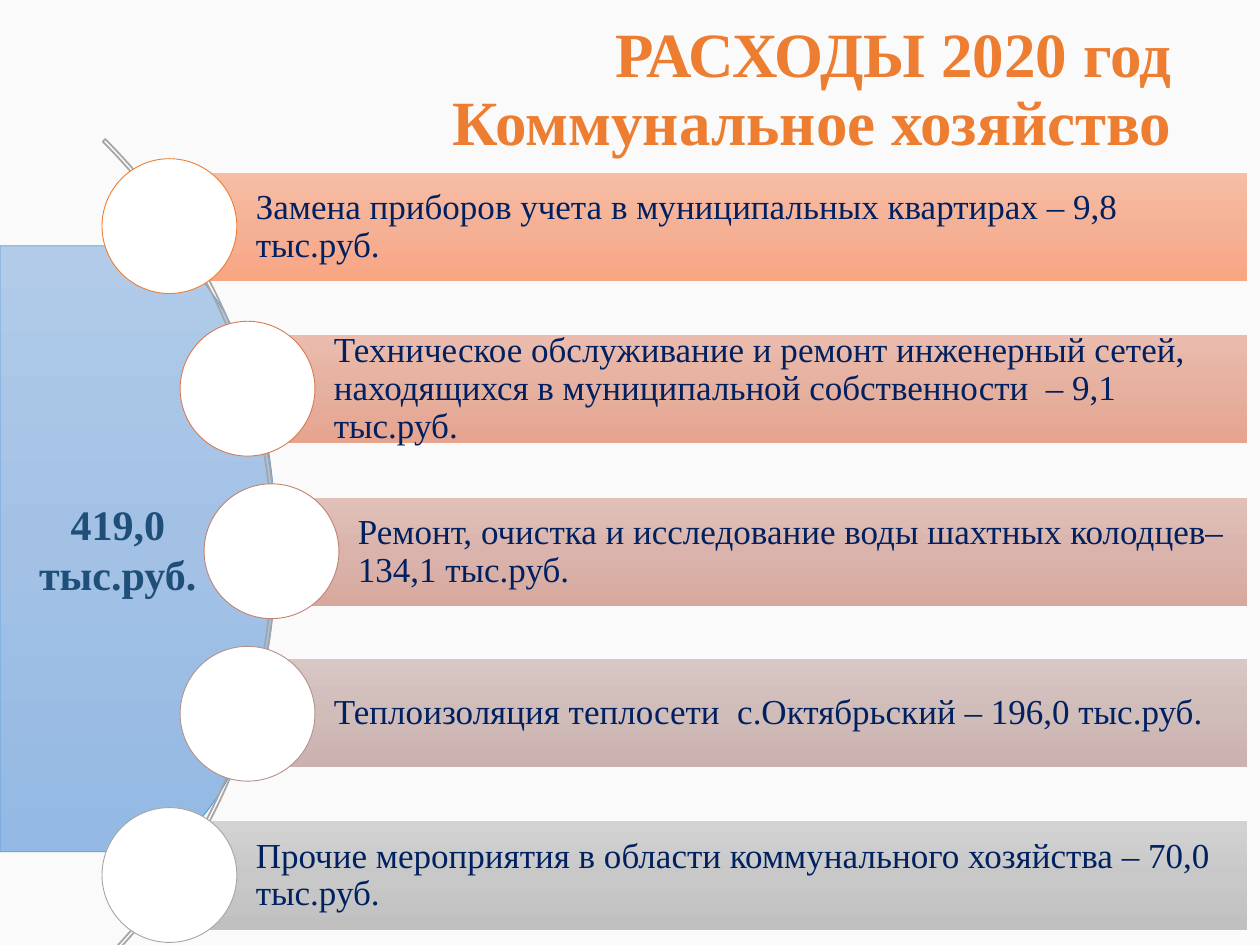
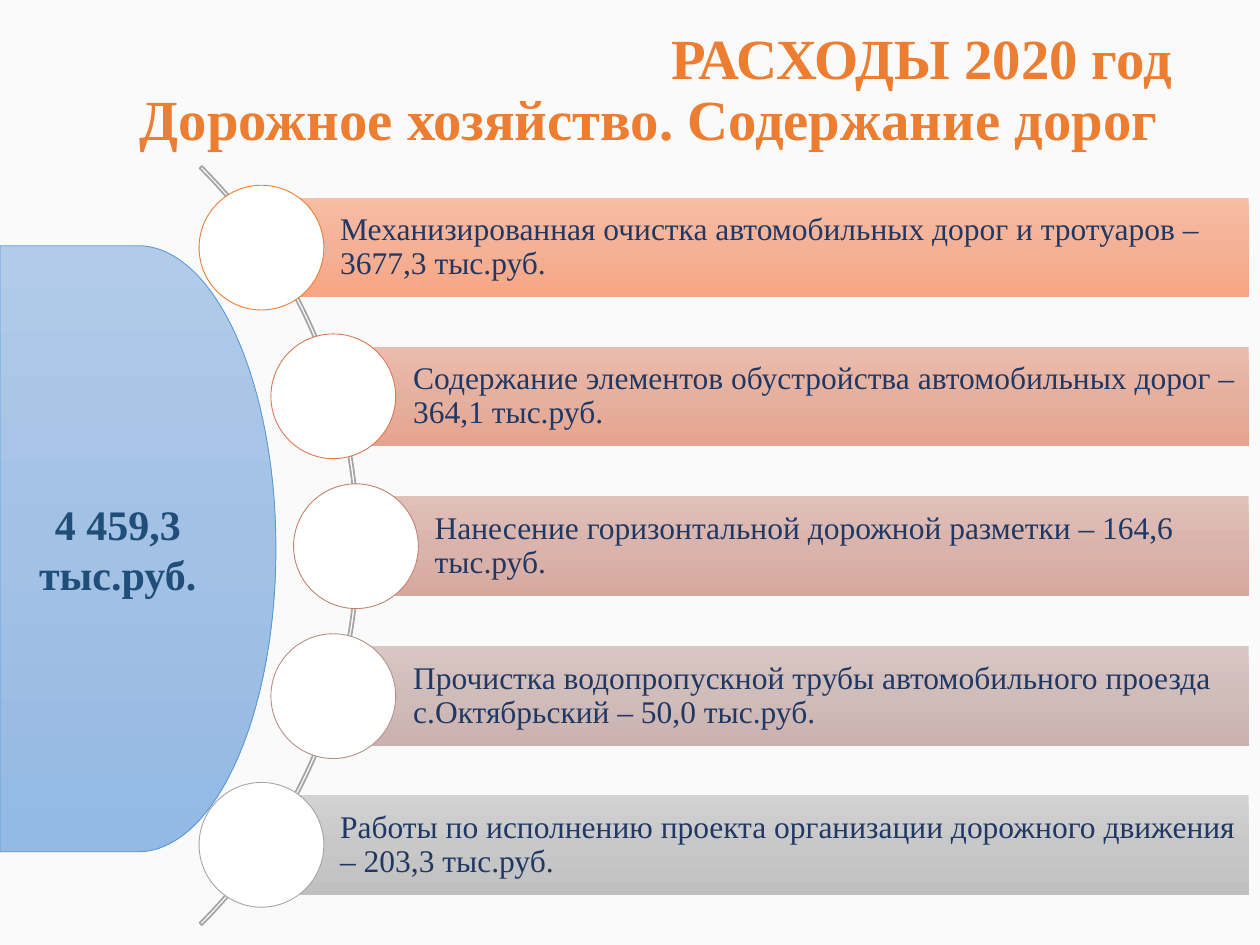
import math
from copy import deepcopy
from dataclasses import dataclass

from pptx import Presentation
from pptx import util as u
from pptx.dml.color import RGBColor
from pptx.enum import shapes, text
from pptx.oxml.ns import qn


@dataclass(frozen=True)
class Theme:
    """Colours, font and type sizes shared by the slides."""
    font: str = "Times New Roman"
    background: str = "FAFAFA"
    title: str = "ED7D31"
    total: str = "1F4E79"
    total_size: int = 24
    total_fill: tuple = ("B1CBE9", "A3C1E5", "93B9E4")
    total_line: str = "5B9BD5"
    arc: str = "A5A5A5"
    circle: str = "FFFFFF"
    rows: tuple = (
        ("ED7D31", ("F7BDA5", "F5B196", "F8A582")),
        ("D87A51", ("EBBCAE", "E6B09F", "E6A38E")),
        ("C48170", ("E0C0B9", "DAB4AC", "D7A89E")),
        ("B4908B", ("D8C7C5", "D0BCB9", "CBB1AF")),
        ("A5A5A5", ("D2D2D2", "C8C8C8", "C0C0C0")),
    )


@dataclass(frozen=True)
class Expenses:
    """Content and measures of one expense slide."""
    title: str
    title_size: float
    total: str
    items: tuple
    item_size: int
    item_colour: str
    list_box: tuple


THEME = Theme()
EMU_PER_PX = 9144
TITLE_BOX = (78, 0, 862, 145)
TOTAL_BOX = (0, 195, 219, 481)

SLIDES = (
    Expenses(
        "РАСХОДЫ 2020 год\vКоммунальное хозяйство", 36, "419,0 тыс.руб.",
        (
            "Замена приборов учета в муниципальных квартирах – 9,8 тыс.руб.",
            "Техническое обслуживание и ремонт инженерный сетей, находящихся "
            "в муниципальной собственности  – 9,1 тыс.руб.",
            "Ремонт, очистка и исследование воды шахтных колодцев– 134,1 тыс.руб.",
            "Теплоизоляция теплосети  с.Октябрьский – 196,0 тыс.руб.",
            "Прочие мероприятия в области коммунального хозяйства – 70,0 тыс.руб.",
        ),
        20, "002060", (81, 94, 909, 687)),
    Expenses(
        "РАСХОДЫ 2020 год\vДорожное хозяйство. Содержание дорог ", 32.4,
        "4 459,3 тыс.руб.",
        (
            "Механизированная очистка автомобильных дорог и тротуаров –3677,3 тыс.руб.",
            "Содержание элементов обустройства автомобильных дорог –364,1 тыс.руб.",
            "Нанесение горизонтальной дорожной разметки – 164,6 тыс.руб.",
            "Прочистка водопропускной трубы автомобильного проезда "
            "с.Октябрьский – 50,0 тыс.руб.",
            "Работы по исполнению проекта организации дорожного движения "
            "– 203,3 тыс.руб.",
        ),
        18, "203864", (158, 117, 833, 633)),
)


def px(length):
    """Turn px into EMU."""
    return u.Emu(round(length) * EMU_PER_PX)


def rgb(colour):
    """Turn a hex string into a colour."""
    return RGBColor.from_string(colour)


def fill_gradient(shape, colours):
    """Fill a shape from top to bottom with evenly spaced colours."""
    shape.fill.gradient()
    shape.fill.gradient_angle = 270
    stop_list = shape.element.spPr.find(qn("a:gradFill")).find(qn("a:gsLst"))
    while len(stop_list) < len(colours):
        stop_list.append(deepcopy(stop_list[-1]))
    for index, (stop, colour) in enumerate(zip(shape.fill.gradient_stops, colours)):
        stop.position = index / (len(colours) - 1)
        stop.color.rgb = rgb(colour)


def add_shape(slide, kind, box, fill=None, line=None, line_width=0.5):
    """Add a shape with a solid, gradient or empty fill and an optional line."""
    shape = slide.shapes.add_shape(kind, *map(px, box))
    shape.shadow.inherit = False
    if fill is None:
        shape.fill.background()
    elif isinstance(fill, tuple):
        fill_gradient(shape, fill)
    else:
        shape.fill.solid()
        shape.fill.fore_color.rgb = rgb(fill)
    if line:
        shape.line.color.rgb = rgb(line)
        shape.line.width = u.Pt(line_width)
    else:
        shape.line.fill.background()
    return shape


def write(shape, content, size, colour, align, bold=False, spacing=None):
    """Write one formatted paragraph, centred vertically, into a shape."""
    frame = shape.text_frame
    frame.text = content
    frame.word_wrap = True
    frame.auto_size = text.MSO_AUTO_SIZE.NONE
    frame.vertical_anchor = text.MSO_ANCHOR.MIDDLE
    paragraph = frame.paragraphs[0]
    paragraph.alignment = align
    paragraph.line_spacing = spacing
    for run in paragraph.runs:
        run.font.name = THEME.font
        run.font.size = u.Pt(size)
        run.font.bold = bold
        run.font.color.rgb = rgb(colour)
    for line_break in shape.element.iter(qn("a:br")):
        properties = next(shape.element.iter(qn("a:rPr")))
        line_break.insert(0, deepcopy(properties))


def place_title(slide, box, expenses):
    """Move and format the title placeholder."""
    title = slide.shapes.title
    title.left, title.top, title.width, title.height = map(px, box)
    write(title, expenses.title, expenses.title_size, THEME.title,
          text.PP_ALIGN.RIGHT, bold=True, spacing=0.9)


def add_total(slide, box, expenses):
    """Add the rounded panel with the total sum."""
    panel = add_shape(slide, shapes.MSO_SHAPE.FLOWCHART_DELAY, box,
                      THEME.total_fill, THEME.total_line)
    write(panel, expenses.total, THEME.total_size, THEME.total,
          text.PP_ALIGN.CENTER, bold=True)


def add_expense_list(slide, box, expenses):
    """Add bars and circles that follow an arc inside the box."""
    left, top, width, height = box
    bar = height / 8
    pitch = 1.5 * bar
    circle = 1.25 * bar
    radius = 0.655 * height
    middle_y = top + height / 2
    middle_row = len(expenses.items) // 2

    def bulge(row):
        """Return how far a row stays behind the middle one."""
        return radius - math.sqrt(radius ** 2 - ((row - middle_row) * pitch) ** 2)

    middle_x = left + circle / 2 + bulge(0)
    diameter = 1.346 * height
    arc = add_shape(slide, shapes.MSO_SHAPE.BLOCK_ARC,
                    (middle_x + 3 - diameter, middle_y - diameter / 2,
                     diameter, diameter), line=THEME.arc, line_width=1)
    for index, value in enumerate((189, 27, 0.003)):
        arc.adjustments[index] = value

    for row, (item, (line, fill)) in enumerate(zip(expenses.items, THEME.rows)):
        center_x = middle_x - bulge(row)
        center_y = middle_y + (row - middle_row) * pitch
        strip = add_shape(slide, shapes.MSO_SHAPE.RECTANGLE,
                          (center_x, center_y - bar / 2,
                           left + width - center_x, bar), fill)
        frame = strip.text_frame
        frame.margin_left = px(0.795 * bar)
        frame.margin_top = frame.margin_right = frame.margin_bottom = px(0.065 * bar)
        write(strip, item, expenses.item_size, expenses.item_colour,
              text.PP_ALIGN.LEFT, spacing=0.9)
        add_shape(slide, shapes.MSO_SHAPE.OVAL,
                  (center_x - circle / 2, center_y - circle / 2, circle, circle),
                  THEME.circle, line)


def add_expense_slide(presentation, expenses):
    """Add one slide with title, total and expense list."""
    slide = presentation.slides.add_slide(
        presentation.slide_layouts.get_by_name("Title Only"))
    add_total(slide, TOTAL_BOX, expenses)
    place_title(slide, TITLE_BOX, expenses)
    add_expense_list(slide, expenses.list_box, expenses)


def main():
    """Build and save the presentation."""
    presentation = Presentation()
    presentation.slide_width, presentation.slide_height = px(1000), px(750)
    background = presentation.slide_master.background.fill
    background.solid()
    background.fore_color.rgb = rgb(THEME.background)
    for expenses in SLIDES:
        add_expense_slide(presentation, expenses)
    presentation.save("out.pptx")


if __name__ == "__main__":
    main()
